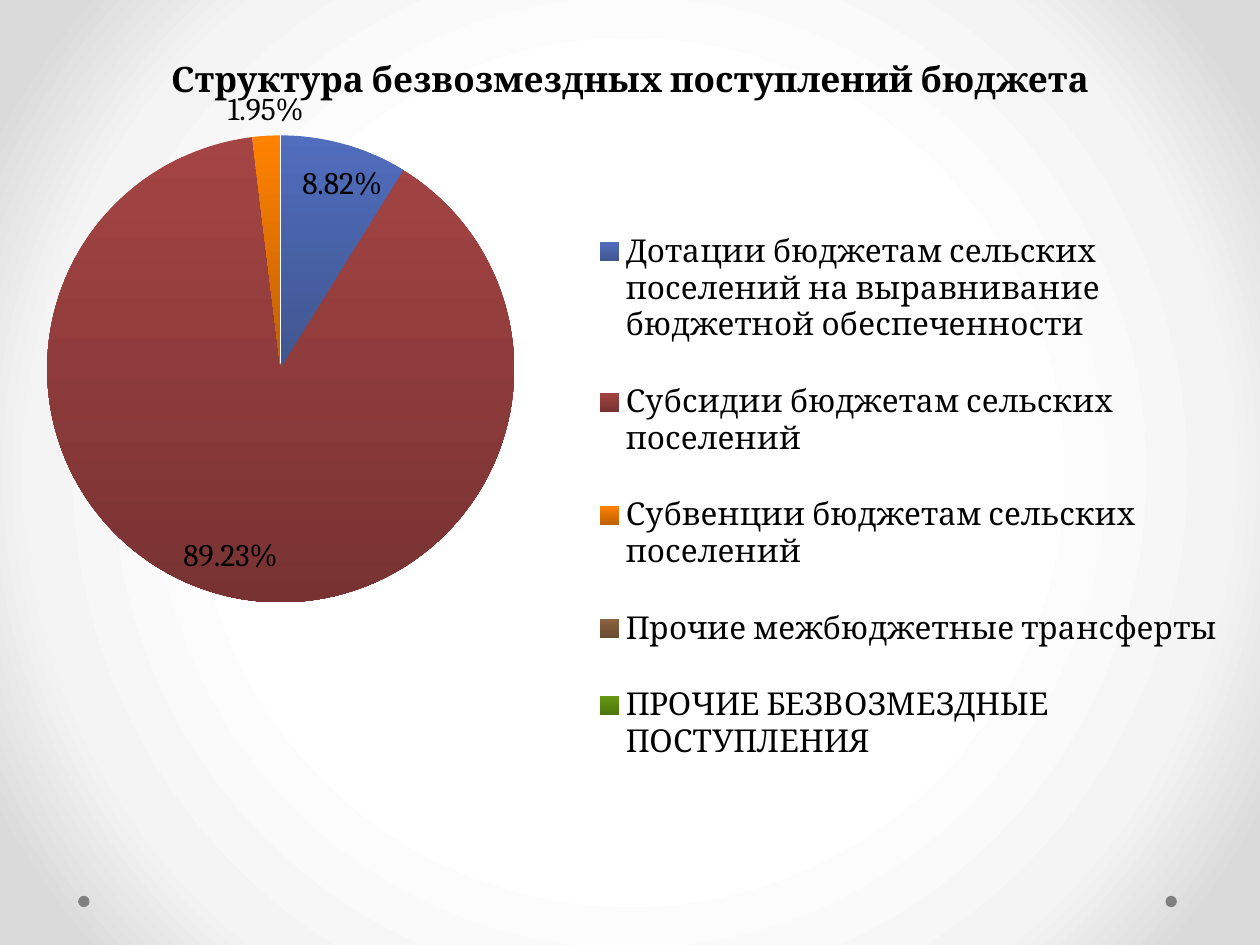
import pptx
import pptx.chart.data
import pptx.dml.color
import pptx.enum.chart
import pptx.enum.shapes
import pptx.enum.text
import pptx.oxml
import pptx.oxml.ns
import pptx.util

Inches = pptx.util.Inches
Pt = pptx.util.Pt
RGB = pptx.dml.color.RGBColor

BLACK = RGB(0, 0, 0)
GRAY = RGB(0x80, 0x80, 0x80)
WHITE = RGB(0xFF, 0xFF, 0xFF)
PALE = RGB(0xF4, 0xF4, 0xF4)
DIM = RGB(0xDA, 0xDA, 0xDA)
BLUE = RGB(0x50, 0x6D, 0xBE), RGB(0x40, 0x56, 0x8F)
RED = RGB(0xA5, 0x44, 0x44), RGB(0x78, 0x32, 0x32)
ORANGE = RGB(0xFF, 0x82, 0x00), RGB(0xBF, 0x60, 0x00)
BROWN = RGB(0x8A, 0x63, 0x40), RGB(0x6A, 0x4A, 0x2E)
GREEN = RGB(0x66, 0x9A, 0x12), RGB(0x4C, 0x75, 0x0C)

# Category, share in percent, slice colours from top to bottom
SHARES = [
    ("Дотации бюджетам сельских поселений на выравнивание бюджетной обеспеченности", 8.82, BLUE),
    ("Субсидии бюджетам сельских поселений", 89.23, RED),
    ("Субвенции бюджетам сельских поселений", 1.95, ORANGE),
    ("Прочие межбюджетные трансферты", 0, BROWN),
    ("ПРОЧИЕ БЕЗВОЗМЕЗДНЫЕ ПОСТУПЛЕНИЯ", 0, GREEN),
]


def node(xml):
    return pptx.oxml.parse_xml(xml)


def apply(item, form):
    for name, value in form.items():
        setattr(item, name, value)


def layout(x, y, w, h, inner=False):
    """Manual chart layout, in fractions of the chart area."""
    target = '<c:layoutTarget val="inner"/>' if inner else ""
    return node(
        f'<c:layout {pptx.oxml.ns.nsdecls("c")}><c:manualLayout>{target}'
        '<c:xMode val="edge"/><c:yMode val="edge"/>'
        f'<c:x val="{x}"/><c:y val="{y}"/><c:w val="{w}"/><c:h val="{h}"/>'
        '</c:manualLayout></c:layout>')


class Page:
    face = "Cambria"

    def __init__(self, deck):
        self.slide = deck.slides.add_slide(deck.slide_layouts[5])

    def font(self, font, size, bold=False):
        apply(font, {"name": self.face, "size": Pt(size), "bold": bold})
        font.color.rgb = BLACK

    def back(self, stops):
        """Radial background from (percent, colour) stops."""
        fill = self.slide.background.fill
        fill.gradient()
        marks = "".join(f'<a:gs pos="{pos * 1000}"><a:srgbClr val="{tint}"/></a:gs>'
                        for pos, tint in stops)
        grad = node(
            f'<a:gradFill {pptx.oxml.ns.nsdecls("a")} rotWithShape="1">'
            f'<a:gsLst>{marks}</a:gsLst><a:path path="circle">'
            '<a:fillToRect l="50000" t="50000" r="50000" b="50000"/>'
            '</a:path></a:gradFill>')
        old = next(self.slide.element.iter(pptx.oxml.ns.qn("a:gradFill")))
        old.getparent().replace(old, grad)

    def dot(self, left, top, size):
        dot = self.slide.shapes.add_shape(
            pptx.enum.shapes.MSO_SHAPE.OVAL,
            Inches(left), Inches(top), Inches(size), Inches(size))
        dot.shadow.inherit = False
        dot.fill.solid()
        dot.fill.fore_color.rgb = GRAY
        dot.line.fill.background()

    def title(self, text, left, top, width, height):
        shape = self.slide.shapes.title
        apply(shape, {"left": Inches(left), "top": Inches(top),
                      "width": Inches(width), "height": Inches(height)})
        frame = shape.text_frame
        apply(frame, {"text": text, "word_wrap": True,
                      "auto_size": pptx.enum.text.MSO_AUTO_SIZE.NONE,
                      "vertical_anchor": pptx.enum.text.MSO_ANCHOR.BOTTOM})
        line = frame.paragraphs[0]
        apply(line, {"alignment": pptx.enum.text.PP_ALIGN.CENTER,
                     "line_spacing": Pt(58)})
        self.font(line.runs[0].font, 20, True)

    def pie(self, rows, left, top, width, height):
        data = pptx.chart.data.CategoryChartData()
        data.categories = [name for name, share, tints in rows]
        data.add_series("Series 1", [share for name, share, tints in rows])
        chart = self.slide.shapes.add_chart(
            pptx.enum.chart.XL_CHART_TYPE.PIE, Inches(left), Inches(top),
            Inches(width), Inches(height), data).chart
        apply(chart, {"has_title": False, "has_legend": True})
        self.font(chart.font, 18)
        plot = chart.plots[0]
        plot.vary_by_categories = True
        self.slices(plot.series[0], rows)
        self.labels(plot.series[0], rows)
        self.legend(chart.legend)
        area = next(chart.element.iter(pptx.oxml.ns.qn("c:plotArea")))
        for old in area.findall(pptx.oxml.ns.qn("c:layout")):
            area.remove(old)
        area.insert(0, layout(0.013, 0.071, 0.425, 0.554, True))

    def slices(self, series, rows):
        for spot, (name, share, tints) in enumerate(rows):
            form = series.points[spot].format
            form.fill.gradient()
            form.fill.gradient_angle = 270
            for stop, tint in zip(form.fill.gradient_stops, tints):
                stop.color.rgb = tint
            form.line.fill.background()

    def labels(self, series, rows):
        """Percent labels on every slice that has a share."""
        labels = series.data_labels
        apply(labels, {"show_percentage": True, "show_value": False,
                       "number_format": "0.00%", "number_format_is_linked": False,
                       "position": pptx.enum.chart.XL_LABEL_POSITION.BEST_FIT})
        self.font(labels.font, 18)
        root = next(series.format.element.iter(pptx.oxml.ns.qn("c:dLbls"))) \
            if hasattr(series.format, "element") else \
            next(series.element.iter(pptx.oxml.ns.qn("c:dLbls"))) \
            if hasattr(series, "element") else None
        empty = [spot for spot, row in enumerate(rows) if not row[1]]
        for place, spot in enumerate(empty):
            root.insert(place, node(
                f'<c:dLbl {pptx.oxml.ns.nsdecls("c")}><c:idx val="{spot}"/>'
                '<c:delete val="1"/></c:dLbl>'))

    def legend(self, legend):
        apply(legend, {"position": pptx.enum.chart.XL_LEGEND_POSITION.RIGHT,
                       "include_in_layout": False})
        self.font(legend.font, 18)
        root = next(self.slide.shapes[-1].chart.element.iter(
            pptx.oxml.ns.qn("c:legend")))
        root.find(pptx.oxml.ns.qn("c:legendPos")).addnext(
            layout(0.47, 0.14, 0.52, 0.72))


def main():
    deck = pptx.Presentation()
    apply(deck, {"slide_width": Inches(10), "slide_height": Inches(7.5)})
    page = Page(deck)
    page.back([(50, WHITE), (76, PALE), (92, DIM)])
    for left in (9.25, 0.62):
        page.dot(left, 7.11, 0.09)
    page.title("Структура безвозмездных поступлений бюджета", 0.5, 0, 9, 0.84)
    page.pie(SHARES, 0, 0.6, 9.88, 6.69)
    deck.save("out.pptx")


if __name__ == "__main__":
    main()
